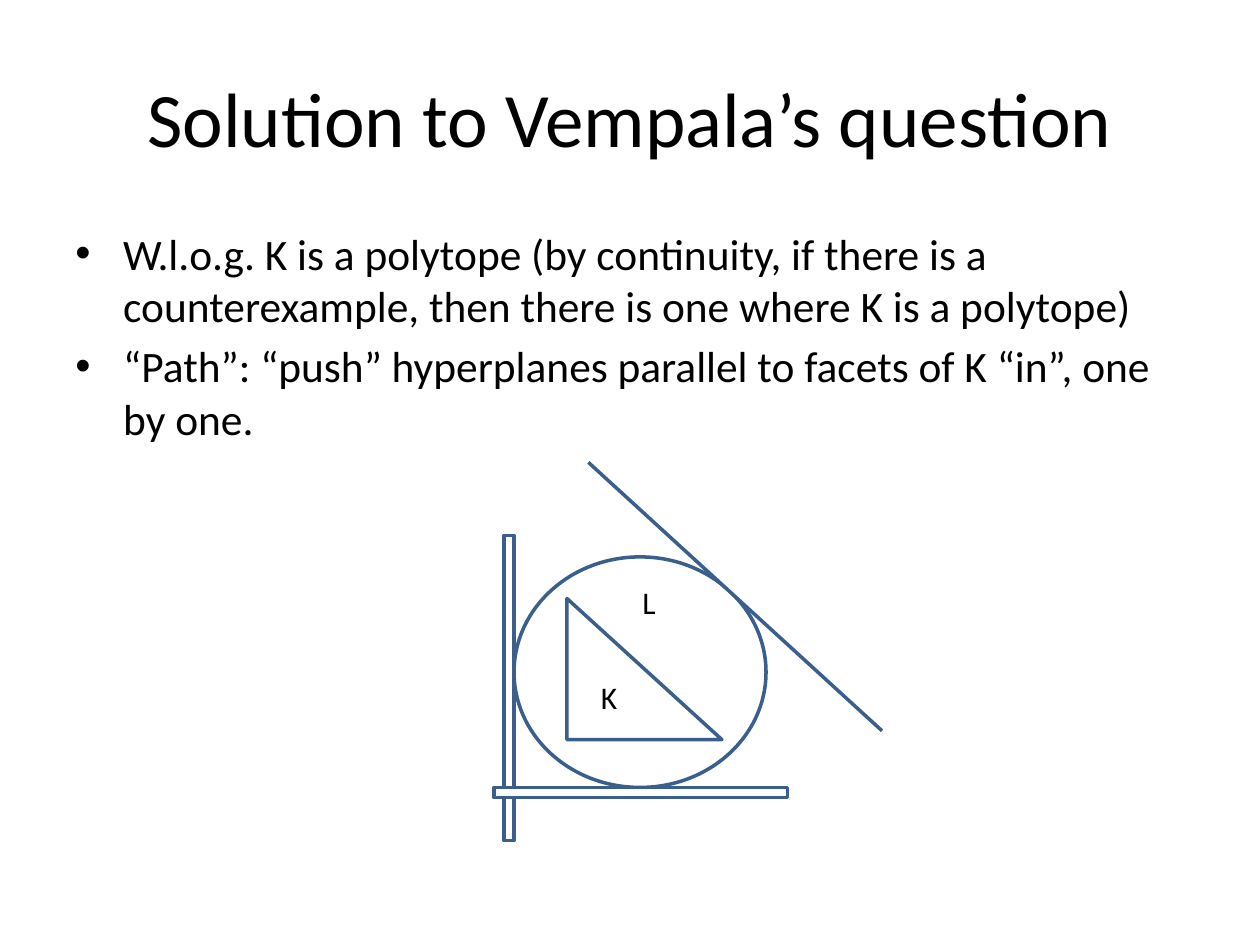
from dataclasses import dataclass

from lxml import etree
from pptx import Presentation
from pptx.dml.color import RGBColor
from pptx.enum.shapes import MSO_CONNECTOR, MSO_SHAPE
from pptx.enum.text import MSO_ANCHOR, MSO_AUTO_SIZE, PP_ALIGN
from pptx.oxml.ns import qn
from pptx.util import Inches, Pt


@dataclass(frozen=True)
class Theme:
    font: str = "Calibri"
    text: RGBColor = RGBColor(0, 0, 0)
    paper: RGBColor = RGBColor(255, 255, 255)
    outline: RGBColor = RGBColor(0x3A, 0x5F, 0x8C)
    line_width: float = 2
    title_size: float = 44
    body_size: float = 24.8
    label_size: float = 18
    bullet_indent: float = 0.38
    bullet_gap: float = 5


THEME = Theme()


def add_bullet(paragraph):
    properties = paragraph._p.get_or_add_pPr()
    indent = Inches(THEME.bullet_indent)
    properties.set("marL", str(indent))
    properties.set("indent", str(-indent))
    etree.SubElement(properties, qn("a:buFont")).set("typeface", "Arial")
    etree.SubElement(properties, qn("a:buChar")).set("char", "•")


def add_text(slide, box, lines, size, align=PP_ALIGN.LEFT, anchor=MSO_ANCHOR.TOP,
             wrap=True, bullets=False):
    shape = slide.shapes.add_textbox(*map(Inches, box))
    frame = shape.text_frame
    frame.word_wrap = wrap
    frame.auto_size = MSO_AUTO_SIZE.NONE if wrap else MSO_AUTO_SIZE.SHAPE_TO_FIT_TEXT
    frame.vertical_anchor = anchor
    for index, line in enumerate(lines):
        paragraph = frame.add_paragraph() if index else frame.paragraphs[0]
        paragraph.alignment = align
        if bullets:
            paragraph.space_before = Pt(THEME.bullet_gap)
            add_bullet(paragraph)
        run = paragraph.add_run()
        run.text = line
        run.font.name = THEME.font
        run.font.size = Pt(size)
        run.font.color.rgb = THEME.text


def draw_outline(line):
    line.color.rgb = THEME.outline
    line.width = Pt(THEME.line_width)


def style_shape(shape, filled, outlined):
    shape.shadow.inherit = False
    if filled:
        shape.fill.solid()
        shape.fill.fore_color.rgb = THEME.paper
    else:
        shape.fill.background()
    if outlined:
        draw_outline(shape.line)
    else:
        shape.line.fill.background()


def add_preset(slide, kind, box, filled=True, outlined=True):
    shape = slide.shapes.add_shape(kind, *map(Inches, box))
    style_shape(shape, filled, outlined)


def add_polygon(slide, points, filled=False, outlined=True):
    start, *rest = [(Inches(x), Inches(y)) for x, y in points]
    builder = slide.shapes.build_freeform(*start)
    builder.add_line_segments(rest, close=True)
    style_shape(builder.convert_to_shape(), filled, outlined)


def add_line(slide, start, end):
    connector = slide.shapes.add_connector(
        MSO_CONNECTOR.STRAIGHT, *map(Inches, (*start, *end)))
    draw_outline(connector.line)
    etree.SubElement(connector._element.spPr, qn("a:effectLst"))


def add_diagram(slide, box):
    """Triangle K inside body L, whose round outline is cut by three hyperplanes."""
    left, top, width, height = box
    right, slope_bottom = left + 3.08, top + 2.13
    slope_left = left + 0.75
    floor, bar = top + 2.58, 0.08
    wall = left + bar

    add_text(slide, (left + 1.08, top + 0.91, 0.31, 0.4), ["L"], THEME.label_size, wrap=False)
    k_left, k_top, k_right, k_bottom = left + 0.58, top + 1.08, left + 1.81, top + 2.2
    add_polygon(slide, [(k_left, k_top), (k_left, k_bottom), (k_right, k_bottom)])
    add_preset(slide, MSO_SHAPE.OVAL, (wall + bar, top + 0.75, 2, 1.83), filled=False)

    # Plain areas hide the parts of L beyond the floor and the slope.
    add_preset(slide, MSO_SHAPE.RECTANGLE, (left, floor, 2.33, height - 2.58), outlined=False)
    add_polygon(slide, [(right, slope_bottom), (right, top), (slope_left, top)],
                filled=True, outlined=False)

    add_preset(slide, MSO_SHAPE.RECTANGLE, (wall, top + 0.58, bar, 2.42))
    add_preset(slide, MSO_SHAPE.RECTANGLE, (left, floor, 2.33, bar))
    add_line(slide, (slope_left, top), (right, slope_bottom))
    add_text(slide, (slope_left, top + 1.66, 0.33, 0.4), ["K"], THEME.label_size, wrap=False)


def main():
    presentation = Presentation()
    presentation.slide_width, presentation.slide_height = Inches(10), Inches(7.5)
    slide = presentation.slides.add_slide(presentation.slide_layouts[6])
    add_text(slide, (0.5, 0.3, 9, 1.25), ["Solution to Vempala’s question"],
             THEME.title_size, align=PP_ALIGN.CENTER, anchor=MSO_ANCHOR.MIDDLE)
    add_text(slide, (0.5, 1.75, 9, 1.83), [
        "W.l.o.g. K is a polytope (by continuity, if there is a counterexample, "
        "then there is one where K is a polytope)",
        "“Path”: “push” hyperplanes parallel to facets of K “in”, one by one.",
    ], THEME.body_size, bullets=True)
    add_diagram(slide, (3.92, 3.67, 3.08, 3.33))
    presentation.save("out.pptx")


if __name__ == "__main__":
    main()
